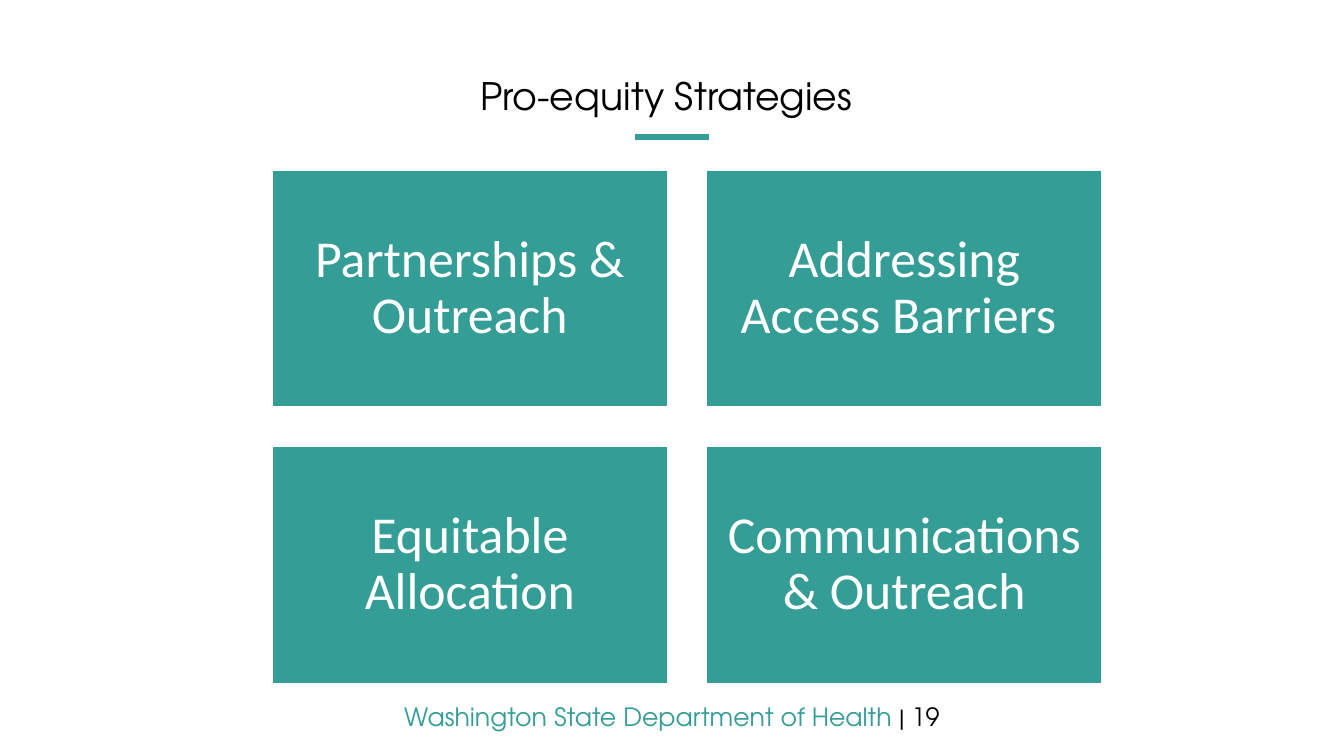
from dataclasses import dataclass
from itertools import product

from lxml.etree import SubElement
from pptx import Presentation
from pptx.dml.color import RGBColor
from pptx.enum.shapes import MSO_CONNECTOR as Connector, MSO_SHAPE as Shape
from pptx.enum.text import MSO_ANCHOR as Anchor, PP_ALIGN as Align
from pptx.oxml.ns import qn
from pptx.util import Cm, Pt


@dataclass(frozen=True)
class Theme:
    teal: RGBColor = RGBColor(0x34, 0x9D, 0x96)
    white: RGBColor = RGBColor(0xFF, 0xFF, 0xFF)
    black: RGBColor = RGBColor(0, 0, 0)
    heading_font: str = "TeX Gyre Adventor"
    card_font: str = "Calibri"
    title_size: Pt = Pt(27)
    card_size: Pt = Pt(37)
    footer_size: Pt = Pt(18)


THEME = Theme()
SLIDE_WIDTH, SLIDE_HEIGHT = Cm(33.87), Cm(19.05)
GRID_LEFT, GRID_TOP = Cm(6.86), Cm(4.29)
CARD_WIDTH, CARD_HEIGHT, CARD_GAP = Cm(9.96), Cm(5.97), Cm(0.99)
STRATEGIES = [
    "Partnerships & Outreach",
    "Addressing Access Barriers ",
    "Equitable Allocation",
    "Communications & Outreach",
]


def format_span(span, font, size, color):
    span.font.name = font
    span.font.size = size
    span.font.bold = False
    span.font.color.rgb = color


def set_title(page, text):
    title = page.shapes.title
    title.left, title.top, title.width, title.height = Cm(0), Cm(1.8), Cm(33.83), Cm(1.35)
    frame = title.text_frame
    frame.text = text
    frame.word_wrap = True
    frame.vertical_anchor = Anchor.MIDDLE
    para = frame.paragraphs[0]
    para.alignment = Align.CENTER
    para.line_spacing = 0.9
    format_span(para.runs[0], THEME.heading_font, THEME.title_size, THEME.black)


def add_rule(page):
    y = Cm(3.45)
    rule = page.shapes.add_connector(Connector.STRAIGHT, Cm(16), y, Cm(17.86), y)
    rule.line.color.rgb = THEME.teal
    rule.line.width = Pt(4)
    SubElement(rule.element.spPr, qn("a:effectLst"))


def add_card(page, text, row, column):
    card = page.shapes.add_shape(
        Shape.RECTANGLE,
        GRID_LEFT + column * (CARD_WIDTH + CARD_GAP),
        GRID_TOP + row * (CARD_HEIGHT + CARD_GAP),
        CARD_WIDTH,
        CARD_HEIGHT,
    )
    card.shadow.inherit = False
    card.fill.solid()
    card.fill.fore_color.rgb = THEME.teal
    card.line.color.rgb = THEME.white
    card.line.width = Pt(1)
    frame = card.text_frame
    frame.text = text
    frame.word_wrap = True
    frame.vertical_anchor = Anchor.MIDDLE
    frame.margin_left = frame.margin_right = Cm(0.38)
    frame.margin_top = frame.margin_bottom = Cm(0.38)
    para = frame.paragraphs[0]
    para.alignment = Align.CENTER
    para.line_spacing = 0.9
    format_span(para.runs[0], THEME.card_font, THEME.card_size, THEME.white)


def add_footer(page, owner, number):
    box = page.shapes.add_textbox(Cm(0), Cm(17.55), SLIDE_WIDTH, Cm(1.02))
    frame = box.text_frame
    frame.word_wrap = True
    para = frame.paragraphs[0]
    para.alignment = Align.CENTER
    for text, color in ((owner, THEME.teal), (number, THEME.black)):
        span = para.add_run()
        span.text = text
        format_span(span, THEME.heading_font, THEME.footer_size, color)


def main():
    deck = Presentation()
    deck.slide_width, deck.slide_height = SLIDE_WIDTH, SLIDE_HEIGHT
    page = deck.slides.add_slide(deck.slide_layouts.get_by_name("Title Only"))
    set_title(page, "Pro-equity Strategies ")
    add_rule(page)
    for text, (row, column) in zip(STRATEGIES, product(range(2), repeat=2)):
        add_card(page, text, row, column)
    add_footer(page, "Washington State Department of Health ", "| 19")
    deck.save("out.pptx")


if __name__ == "__main__":
    main()
